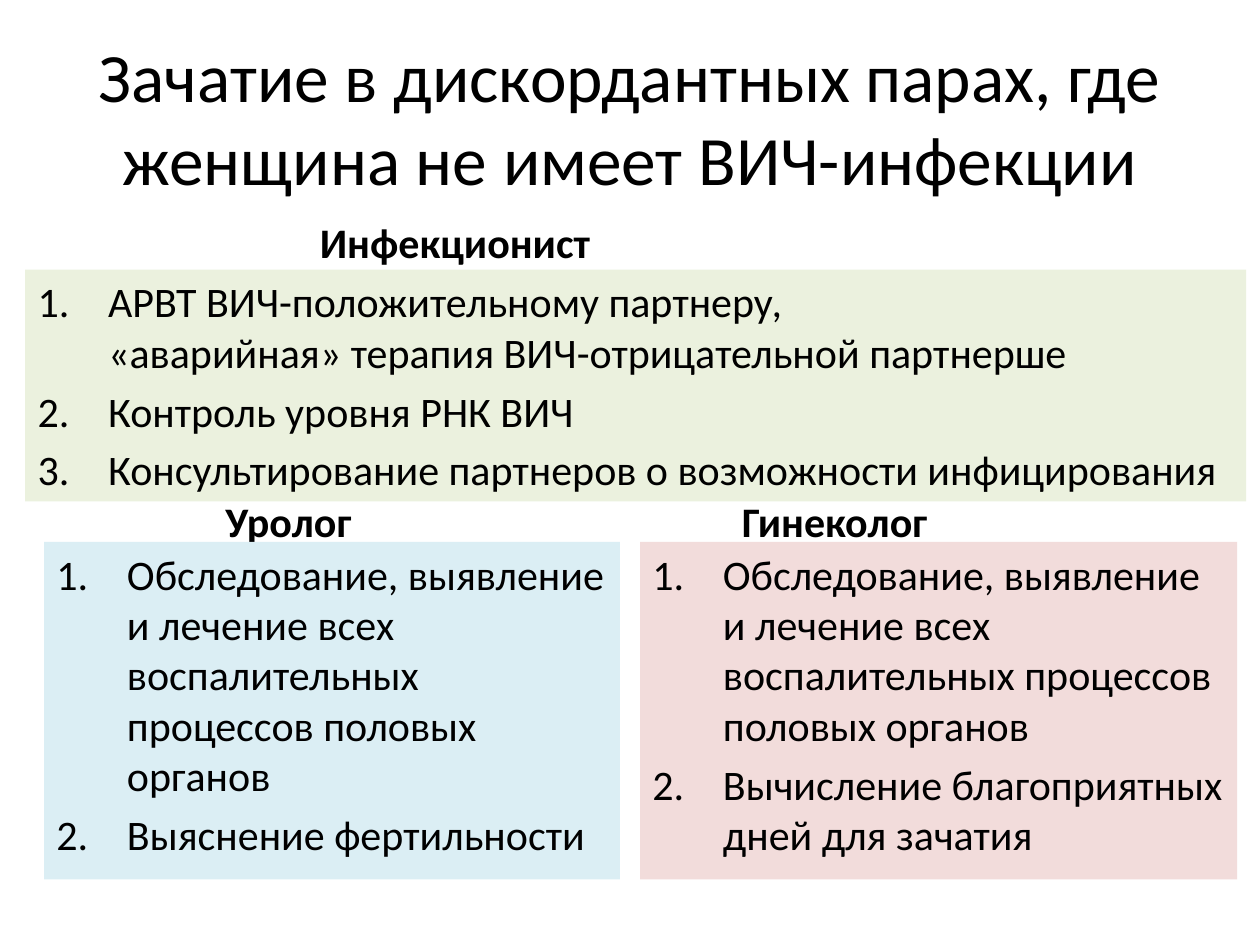
from dataclasses import dataclass

from lxml.etree import SubElement
from pptx import Presentation
from pptx.dml.color import RGBColor
from pptx.enum.shapes import MSO_SHAPE
from pptx.enum.text import MSO_ANCHOR, PP_ALIGN
from pptx.oxml.ns import qn
from pptx.util import Inches, Pt


@dataclass(frozen=True)
class Theme:
    font: str = "Calibri"
    text: str = "000000"
    green: str = "EBF1DE"
    pink: str = "F2DCDB"
    blue: str = "DBEEF4"
    title_size: float = 39.6
    body_size: float = 24
    space_before: float = 4.8


theme = Theme()
deck = Presentation()
deck.slide_width, deck.slide_height = Inches(10), Inches(7.5)
page = deck.slides.add_slide(deck.slide_layouts[6])


def write(box, text, size=theme.body_size, bold=False, align=PP_ALIGN.LEFT,
          anchor=MSO_ANCHOR.TOP, before=theme.space_before, numbered=False):
    frame = box.text_frame
    frame.word_wrap = True
    frame.vertical_anchor = anchor
    frame.text = text
    for para in frame.paragraphs:
        para.alignment = align
        para.space_before = Pt(before)
        for span in para.runs:
            span.font.name = theme.font
            span.font.size = Pt(size)
            span.font.bold = bold
            span.font.color.rgb = RGBColor.from_string(theme.text)
        if numbered:
            properties = para._p.get_or_add_pPr()
            properties.set("marL", str(Inches(0.56)))
            properties.set("indent", str(Inches(-0.56)))
            SubElement(properties, qn("a:buFont"), typeface="+mj-lt")
            SubElement(properties, qn("a:buAutoNum"), type="arabicPeriod")


title = page.shapes.add_textbox(Inches(0.12), Inches(0.3), Inches(9.76), Inches(1.25))
write(title, "Зачатие в дискордантных парах, где женщина не имеет ВИЧ-инфекции",
      size=theme.title_size, align=PP_ALIGN.CENTER, anchor=MSO_ANCHOR.MIDDLE, before=0)

examination = "Обследование, выявление и лечение всех воспалительных процессов половых органов"
specialists = [
    ("Инфекционист", (2.44, 1.47, 3.7, 0.7), theme.green, (0.2, 2.14, 9.69, 1.84), [
        "АРВТ ВИЧ-положительному партнеру, \v«аварийная» терапия ВИЧ-отрицательной партнерше",
        "Контроль уровня РНК ВИЧ",
        "Консультирование партнеров о возможности инфицирования",
    ]),
    ("Гинеколог", (5.79, 3.68, 3.4, 0.7), theme.pink, (5.08, 4.3, 4.74, 2.68), [
        examination,
        "Вычисление благоприятных дней для зачатия",
    ]),
    ("Уролог", (1.69, 3.84, 1.57, 0.54), theme.blue, (0.35, 4.3, 4.57, 2.68), [
        examination,
        "Выяснение фертильности",
    ]),
]

for name, heading_area, color, panel_area, tasks in specialists:
    heading = page.shapes.add_textbox(*map(Inches, heading_area))
    write(heading, name, bold=True, anchor=MSO_ANCHOR.BOTTOM)
    panel = page.shapes.add_shape(MSO_SHAPE.RECTANGLE, *map(Inches, panel_area))
    panel.shadow.inherit = False
    panel.fill.solid()
    panel.fill.fore_color.rgb = RGBColor.from_string(color)
    panel.line.fill.background()
    write(panel, "\n".join(tasks), numbered=True)

deck.save("out.pptx")
